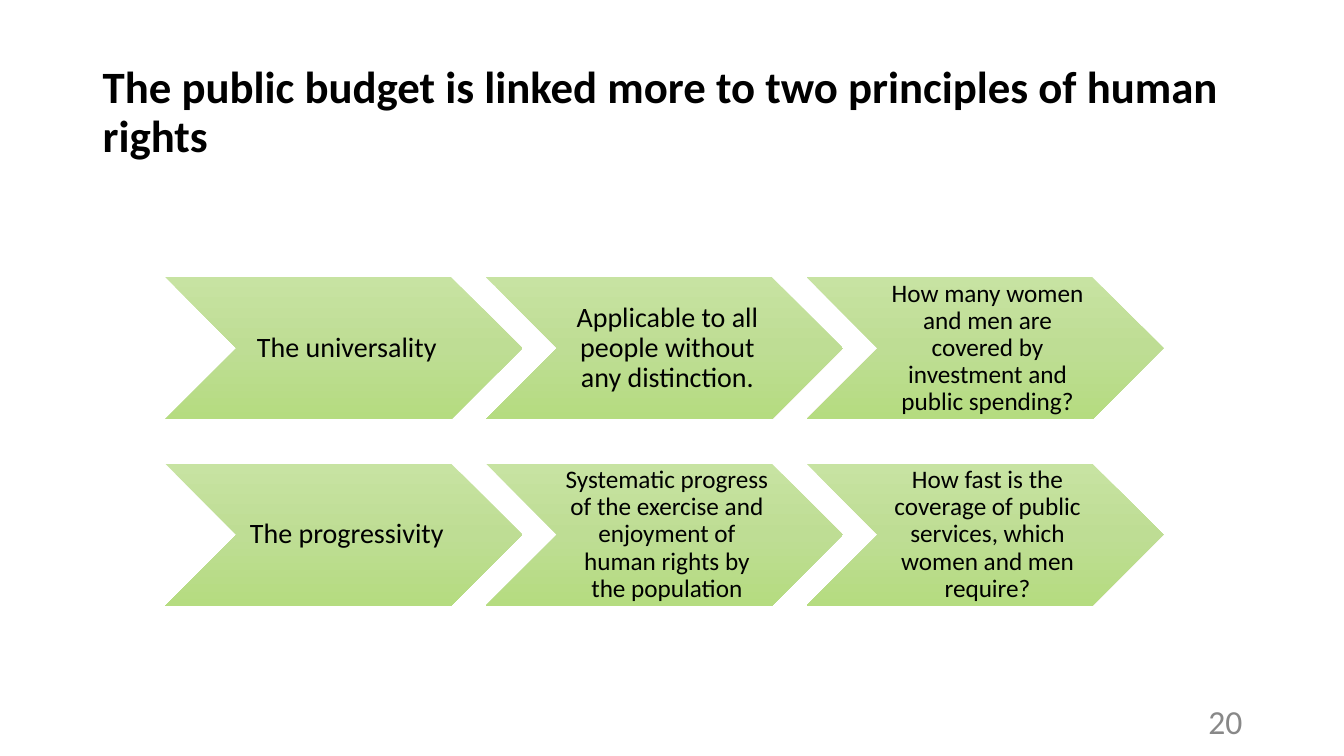
from copy import deepcopy

from pptx import Presentation
from pptx.dml.color import RGBColor
from pptx.enum.shapes import MSO_SHAPE
from pptx.enum.text import MSO_ANCHOR, PP_ALIGN
from pptx.oxml.ns import qn
from pptx.util import Inches, Pt

BLACK = RGBColor(0x00, 0x00, 0x00)
GREY = RGBColor(0x88, 0x88, 0x88)
GREENS = [
    (0, RGBColor(0xC7, 0xE3, 0xA2)),
    (0.5, RGBColor(0xBE, 0xDD, 0x94)),
    (1, RGBColor(0xB5, 0xDC, 0x80)),
]

CHEVRON_WIDTH, CHEVRON_HEIGHT = 3.54, 1.41
LEFT, TOP = 1.64, 2.75
COLUMN_STEP, ROW_STEP = 3.18, 1.85

PRINCIPLES = [
    [
        ("The universality", 20),
        ("Applicable to all people without any distinction.", 20),
        ("How many women and men are covered by investment and public spending?", 18),
    ],
    [
        ("The progressivity", 20),
        ("Systematic progress of the exercise and enjoyment of human rights by the population", 18),
        ("How fast is the coverage of public services, which women and men require?", 18),
    ],
]


class SlideBuilder:
    font_name = "Calibri"

    def __init__(self, page):
        self.page = page

    def set_text(self, shape, text, size, color=BLACK, bold=False,
                 align=PP_ALIGN.LEFT, spacing=1.0, insets=(0.1, 0.05, 0.1, 0.05)):
        frame = shape.text_frame
        frame.text = text
        frame.word_wrap = True
        frame.vertical_anchor = MSO_ANCHOR.MIDDLE
        (frame.margin_left, frame.margin_top,
         frame.margin_right, frame.margin_bottom) = map(Inches, insets)
        para = frame.paragraphs[0]
        para.alignment = align
        para.line_spacing = spacing
        font = para.runs[0].font
        font.name, font.size, font.bold = self.font_name, Pt(size), bold
        font.color.rgb = color

    def text_box(self, left, top, width, height, text, size, **style):
        box = self.page.shapes.add_textbox(*map(Inches, (left, top, width, height)))
        self.set_text(box, text, size, **style)

    def fill_green(self, shape):
        """Apply the three-stop vertical gradient."""
        shape.fill.gradient()
        shape.fill.gradient_angle = 270
        stop_list = next(shape.element.iter(qn("a:gsLst")))
        stop_list.insert(1, deepcopy(stop_list[0]))
        for stop, (position, color) in zip(shape.fill.gradient_stops, GREENS):
            stop.position = position
            stop.color.rgb = color

    def chevron(self, left, top, text, size):
        shape = self.page.shapes.add_shape(
            MSO_SHAPE.CHEVRON,
            *map(Inches, (left, top, CHEVRON_WIDTH, CHEVRON_HEIGHT)))
        shape.adjustments[0] = 0.5
        shape.shadow.inherit = False
        shape.line.fill.background()
        self.fill_green(shape)
        left_inset = 0.09 if size == 20 else 0.08
        self.set_text(shape, text, size, align=PP_ALIGN.CENTER, spacing=0.9,
                      insets=(left_inset, 0.03, 0.03, 0.03))


def main():
    deck = Presentation()
    deck.slide_width, deck.slide_height = Inches(13.33), Inches(7.5)
    builder = SlideBuilder(deck.slides.add_slide(deck.slide_layouts[6]))

    builder.text_box(0.92, 0.4, 11.5, 1.45,
                     "The public budget is linked more to two principles of human rights",
                     32, bold=True, spacing=0.9)
    builder.text_box(9.42, 6.95, 3, 0.4, "20", 24, color=GREY, align=PP_ALIGN.RIGHT)

    for row, steps in enumerate(PRINCIPLES):
        for column, (text, size) in enumerate(steps):
            builder.chevron(LEFT + column * COLUMN_STEP, TOP + row * ROW_STEP, text, size)

    deck.save("out.pptx")


if __name__ == "__main__":
    main()
